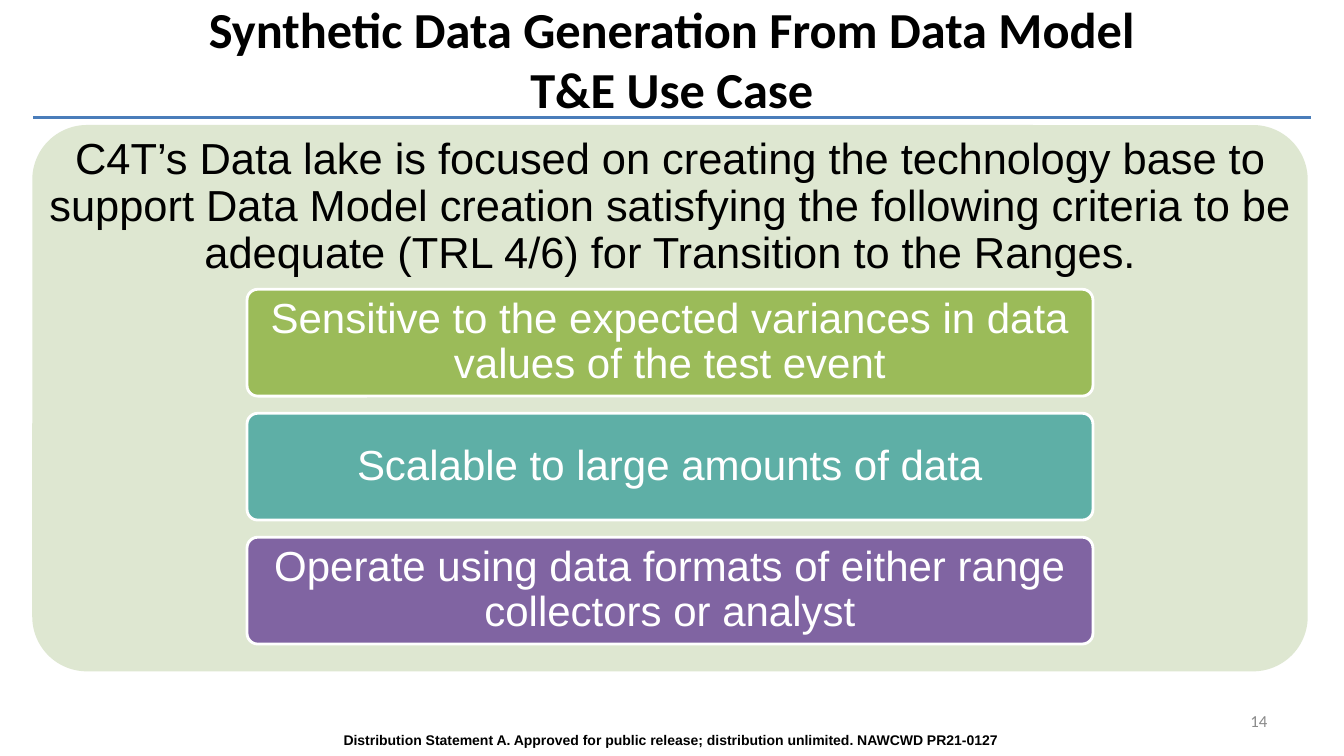
from pptx import Presentation
from pptx.dml.color import RGBColor
from pptx.enum.shapes import MSO_CONNECTOR, MSO_SHAPE
from pptx.enum.text import MSO_ANCHOR, MSO_AUTO_SIZE, PP_ALIGN
from pptx.oxml.ns import qn
from pptx.util import Pt
from lxml.etree import SubElement

# Content
TITLE = "Synthetic Data Generation From Data Model\vT&E Use Case"
INTRO = (
    "C4T’s Data lake is focused on creating the technology base to support "
    "Data Model creation satisfying the following criteria to be adequate "
    "(TRL 4/6) for Transition to the Ranges."
)
CRITERIA = [
    ("Sensitive to the expected variances in data values of the test event", "9BBB59"),
    ("Scalable to large amounts of data", "5EAFA6"),
    ("Operate using data formats of either range collectors or analyst", "8064A2"),
]
STATEMENT = (
    "Distribution Statement A. Approved for public release; "
    "distribution unlimited. NAWCWD PR21-0127"
)
PAGE_NUMBER = "14"

# Layout in px, 100 to the inch
PX = 9144
PAGE_SIZE = (1333, 750)
PANEL = (32, 124, 1265, 542)
INTRO_HEIGHT = 163
CARD_LEFT, CARD_TOP, CARD_WIDTH, CARD_HEIGHT = 245, 287, 839, 106
CARD_STEP = 123


def emu(*lengths):
    return [length * PX for length in lengths]


def color(value):
    return RGBColor.from_string(value)


def write(shape, text, size, font="Arial", ink="000000", bold=False,
          align=PP_ALIGN.CENTER, anchor=MSO_ANCHOR.MIDDLE,
          insets=(10, 5), spacing=None):
    frame = shape.text_frame
    frame.text = text
    frame.word_wrap = True
    frame.auto_size = MSO_AUTO_SIZE.NONE
    frame.vertical_anchor = anchor
    frame.margin_left = frame.margin_right = insets[0] * PX
    frame.margin_top = frame.margin_bottom = insets[1] * PX
    paragraph = frame.paragraphs[0]
    paragraph.alignment = align
    paragraph.line_spacing = spacing
    for span in paragraph.runs:
        span.font.name = font
        span.font.size = Pt(size)
        span.font.bold = bold
        span.font.color.rgb = color(ink)


def add_rounded(page, box, fill, outline=None):
    shape = page.shapes.add_shape(MSO_SHAPE.ROUNDED_RECTANGLE, *emu(*box))
    shape.adjustments[0] = 0.1
    shape.shadow.inherit = False
    shape.fill.solid()
    shape.fill.fore_color.rgb = color(fill)
    if outline:
        shape.line.color.rgb = color(outline)
        shape.line.width = Pt(2)
    else:
        shape.line.fill.background()
    return shape


def add_label(page, box, text, size, **style):
    write(page.shapes.add_textbox(*emu(*box)), text, size, **style)


deck = Presentation()
deck.slide_width, deck.slide_height = emu(*PAGE_SIZE)
page = deck.slides.add_slide(deck.slide_layouts[5])

# Title and rule below it
title = page.shapes.title
title.left, title.top, title.width, title.height = emu(0, 8, 1333, 100)
write(title, TITLE, 36, font="Calibri", bold=True)

rule = page.shapes.add_connector(MSO_CONNECTOR.STRAIGHT, *emu(33, 117, 1300, 117))
rule.line.color.rgb = color("4A7DBA")
rule.line.width = Pt(2.25)
SubElement(rule._element.spPr, qn("a:effectLst"))

# Panel with introduction
add_rounded(page, PANEL, "DEE7D1")
add_label(page, (*PANEL[:3], INTRO_HEIGHT), INTRO, 31, insets=(13, 13), spacing=0.9)

# Criteria cards
for index, (criterion, fill) in enumerate(CRITERIA):
    box = (CARD_LEFT, CARD_TOP + index * CARD_STEP, CARD_WIDTH, CARD_HEIGHT)
    card = add_rounded(page, box, fill, outline="FFFFFF")
    write(card, criterion, 30, ink="FFFFFF", insets=(11, 9), spacing=0.9)

# Footer
add_label(page, (15, 721, 1300, 27), STATEMENT, 10, bold=True, anchor=MSO_ANCHOR.TOP)
add_label(page, (956, 695, 311, 40), PAGE_NUMBER, 12, font="Calibri",
          ink="898989", align=PP_ALIGN.RIGHT)

deck.save("out.pptx")
